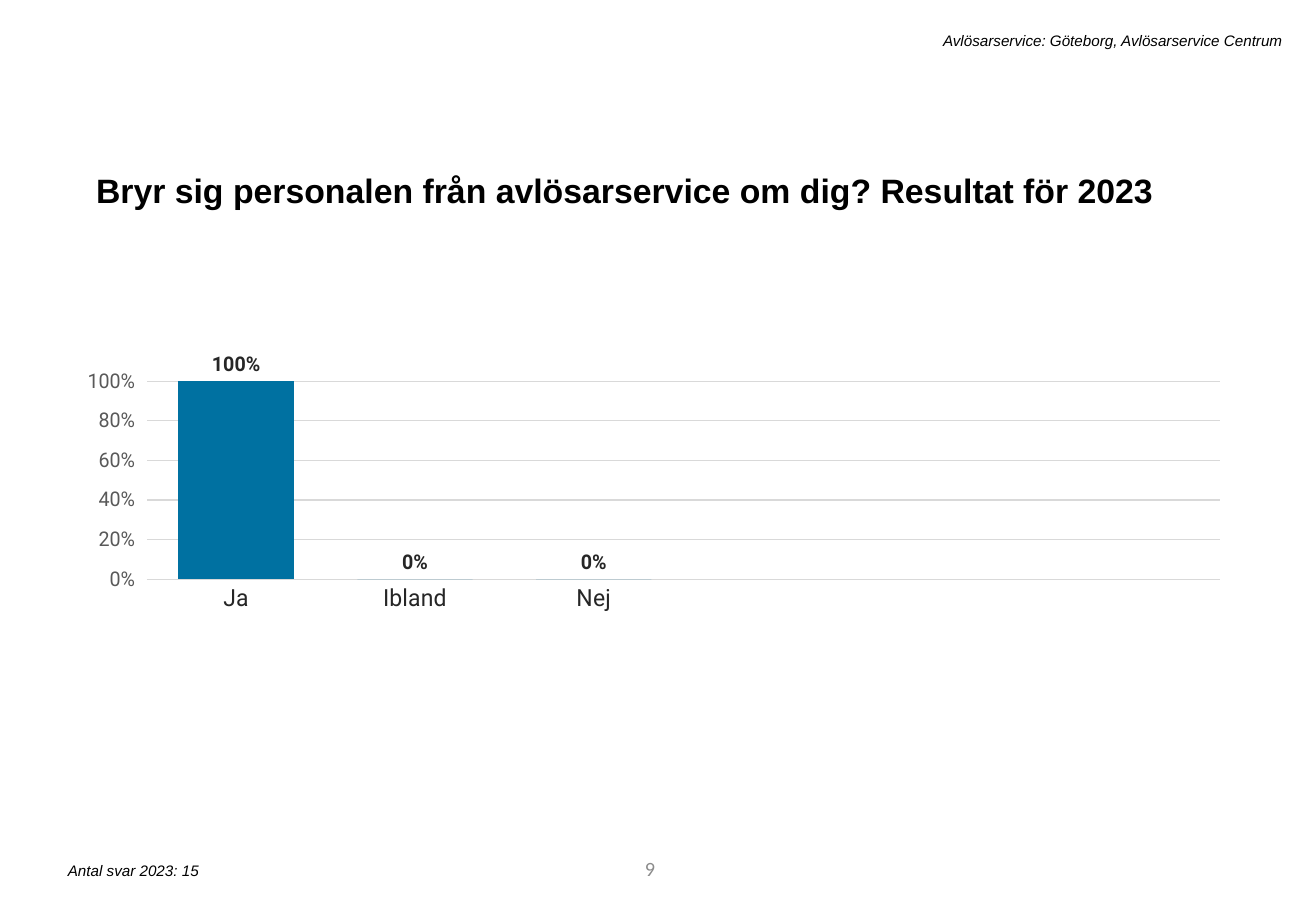
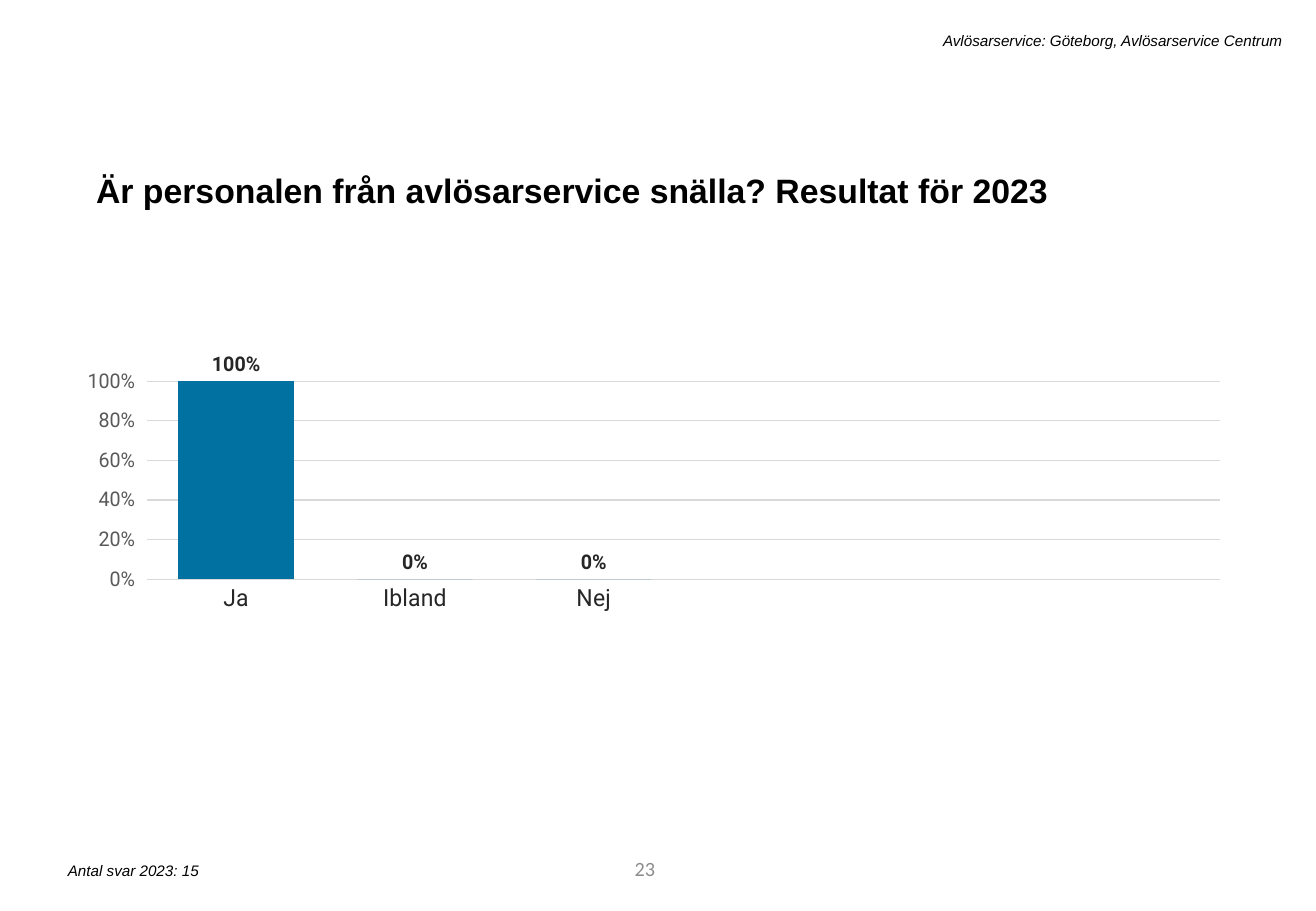
from dataclasses import dataclass

from lxml import etree
from pptx import Presentation
from pptx.chart.data import CategoryChartData
from pptx.dml.color import RGBColor
from pptx.enum.chart import XL_CHART_TYPE, XL_LABEL_POSITION, XL_TICK_MARK
from pptx.enum.text import MSO_ANCHOR, MSO_AUTO_SIZE, PP_ALIGN
from pptx.oxml.ns import qn
from pptx.util import Inches, Pt

LEFT, RIGHT = PP_ALIGN.LEFT, PP_ALIGN.RIGHT
TOP, MIDDLE = MSO_ANCHOR.TOP, MSO_ANCHOR.MIDDLE
COLUMN = XL_CHART_TYPE.COLUMN_CLUSTERED
OUT_END = XL_LABEL_POSITION.OUTSIDE_END
NO_TICK, OUT_TICK = XL_TICK_MARK.NONE, XL_TICK_MARK.OUTSIDE
TITLE_ONLY = 5


@dataclass(frozen=True)
class Style:
    face: str
    size: float
    color: str
    bold: bool = False
    italic: bool = False


@dataclass(frozen=True)
class Theme:
    title: Style = Style("Arial", 20, "000000", bold=True)
    note: Style = Style("Arial", 9, "000000", italic=True)
    page: Style = Style("Calibri", 12, "8C8C8C")
    chart: Style = Style("Roboto", 10, "000000")
    cats: Style = Style("Roboto", 14, "262626")
    scale: Style = Style("Roboto", 12, "595959")
    label: Style = Style("Roboto", 12, "262626", bold=True)
    bar: str = "0071A1"
    grid: str = "D9D9D9"


@dataclass(frozen=True)
class Box:
    x: float
    y: float
    w: float
    h: float

    def emu(self) -> tuple:
        return tuple(Inches(n) for n in (self.x, self.y, self.w, self.h))


@dataclass(frozen=True)
class Result:
    page: int
    query: str
    shares: tuple


THEME = Theme()
TITLE = Box(0.69, 1.28, 9.4, 0.47)
HEAD = Box(1.79, 0.21, 8.86, 0.25)
COUNT = Box(0.46, 7.04, 4.41, 0.25)
PAGE = Box(3.05, 6.95, 2.44, 0.4)
CHART = Box(0.72, 2.53, 9.4, 3.95)
PLOT = Box(0.025, 0.154, 0.966, 0.413)  # parts of the chart's size
CATS = ("Ja", "Ibland", "Nej", "", "", "")

RESULTS = (
    Result(9, "Bryr sig personalen från avlösarservice om dig?", (1, 0, 0)),
    Result(23, "Är personalen från avlösarservice snälla?", (1, 0, 0)),
)


def set_font(font, style: Style) -> None:
    font.name = style.face
    font.size = Pt(style.size)
    font.bold = style.bold
    font.italic = style.italic
    font.color.rgb = RGBColor.from_string(style.color)


def fill_text(shape, text: str, style: Style, align=LEFT, anchor=TOP):
    frame = shape.text_frame
    frame.word_wrap = True
    frame.auto_size = MSO_AUTO_SIZE.NONE
    frame.vertical_anchor = anchor
    par = frame.paragraphs[0]
    par.alignment = align
    run = par.add_run()
    run.text = text
    set_font(run.font, style)
    return par


def add_text(slide, box: Box, text: str, style: Style, align=LEFT, anchor=TOP) -> None:
    fill_text(slide.shapes.add_textbox(*box.emu()), text, style, align, anchor)


def add_title(slide, text: str) -> None:
    title = slide.shapes.title
    title.left, title.top, title.width, title.height = TITLE.emu()
    par = fill_text(title, text, THEME.title)
    par.line_spacing = 1.2
    par.space_before = Pt(10)


def set_line(line) -> None:
    line.color.rgb = RGBColor.from_string(THEME.grid)
    line.width = Pt(0.75)


def place_plot(chart) -> None:
    """Fix the inner plot area by a manual layout."""
    area = chart.plots[0]._element.getparent()
    for old in area.findall(qn("c:layout")):
        area.remove(old)
    layout = etree.Element(qn("c:layout"))
    manual = etree.SubElement(layout, qn("c:manualLayout"))
    parts = (("layoutTarget", "inner"), ("xMode", "edge"), ("yMode", "edge"),
             ("x", PLOT.x), ("y", PLOT.y), ("w", PLOT.w), ("h", PLOT.h))
    for tag, val in parts:
        etree.SubElement(manual, qn(f"c:{tag}")).set("val", str(val))
    area.insert(0, layout)


def add_bars(slide, shares: tuple) -> None:
    data = CategoryChartData(number_format="0%")
    data.categories = CATS
    data.add_series("Series 1", shares + (None,) * (len(CATS) - len(shares)))
    chart = slide.shapes.add_chart(COLUMN, *CHART.emu(), data).chart
    chart.has_title = chart.has_legend = False
    set_font(chart.font, THEME.chart)
    place_plot(chart)

    # Bars and their labels
    plot = chart.plots[0]
    plot.gap_width = 55
    plot.vary_by_categories = False
    bars = plot.series[0]
    bars.format.fill.solid()
    bars.format.fill.fore_color.rgb = RGBColor.from_string(THEME.bar)
    labels = bars.data_labels
    labels.show_value = True
    labels.position = OUT_END
    labels.number_format = "0%"
    labels.number_format_is_linked = False
    set_font(labels.font, THEME.label)

    # Axes
    cats = chart.category_axis
    cats.major_tick_mark = cats.minor_tick_mark = NO_TICK
    set_font(cats.tick_labels.font, THEME.cats)
    set_line(cats.format.line)
    scale = chart.value_axis
    scale.minimum_scale, scale.maximum_scale, scale.major_unit = 0, 1, 0.2
    scale.major_tick_mark, scale.minor_tick_mark = OUT_TICK, NO_TICK
    scale.tick_labels.number_format = "0%"
    scale.tick_labels.number_format_is_linked = False
    set_font(scale.tick_labels.font, THEME.scale)
    scale.format.line.fill.background()
    scale.has_major_gridlines = True
    set_line(scale.major_gridlines.format.line)


def add_result(deck, item: Result) -> None:
    slide = deck.slides.add_slide(deck.slide_layouts[TITLE_ONLY])
    add_text(slide, PAGE, str(item.page), THEME.page, RIGHT, MIDDLE)
    add_title(slide, f"{item.query} Resultat för 2023")
    add_text(slide, HEAD, "Avlösarservice: Göteborg, Avlösarservice Centrum", THEME.note, RIGHT)
    add_text(slide, COUNT, "Antal svar 2023: 15", THEME.note)
    add_bars(slide, item.shares)


def main() -> None:
    deck = Presentation()
    deck.slide_width, deck.slide_height = Inches(10.83), Inches(7.5)
    for item in RESULTS:
        add_result(deck, item)
    deck.save("out.pptx")


if __name__ == "__main__":
    main()
